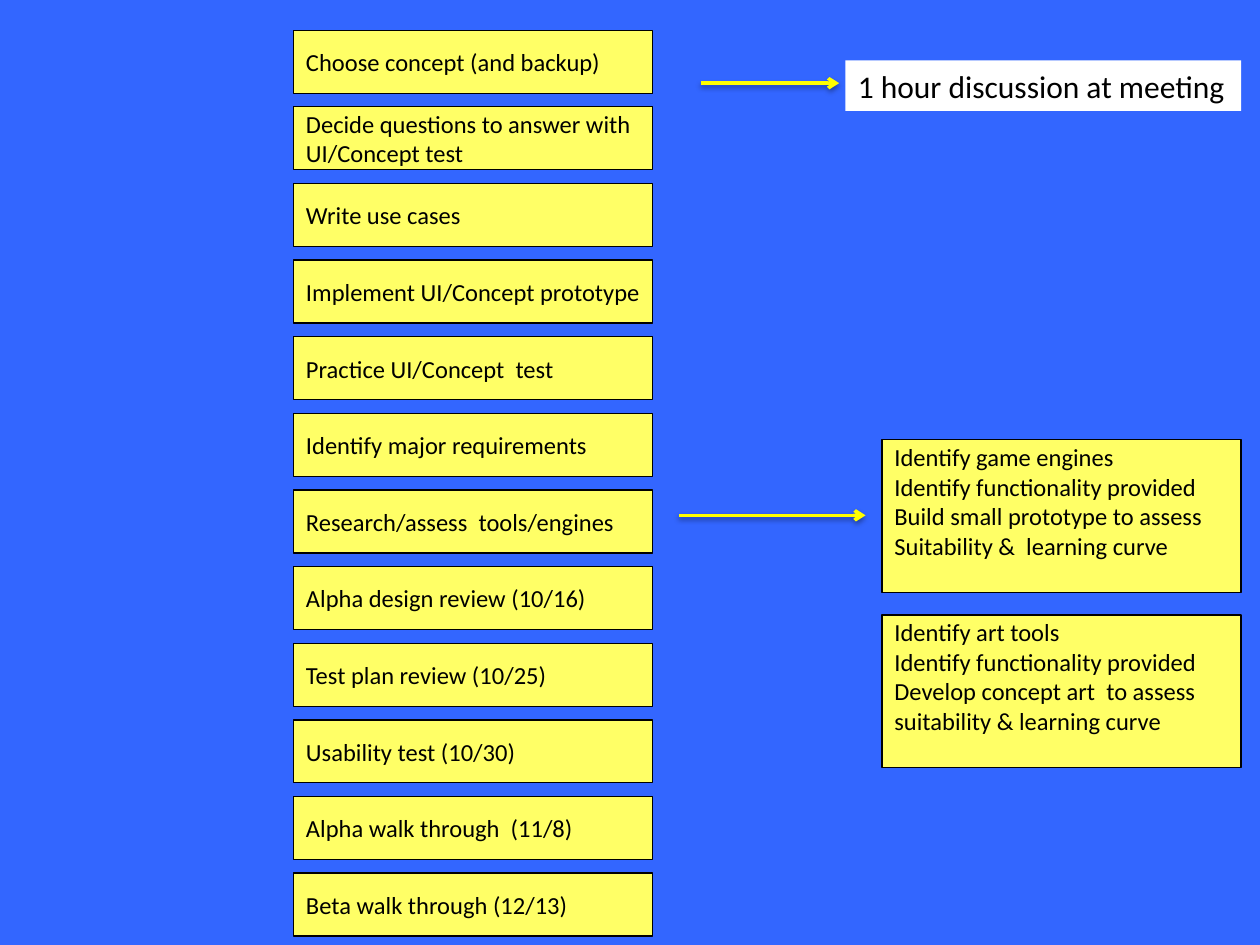
from lxml.etree import SubElement
from pptx import Presentation
from pptx.dml.color import RGBColor
from pptx.enum.shapes import MSO_CONNECTOR as Connector, MSO_SHAPE as Shape
from pptx.enum.text import MSO_ANCHOR as Anchor, PP_ALIGN as Align
from pptx.oxml.ns import qn
from pptx.util import Inches, Pt

BLUE = RGBColor(0x33, 0x66, 0xFF)
PALE_YELLOW = RGBColor(0xFF, 0xFF, 0x66)
YELLOW = RGBColor(0xFF, 0xFF, 0x00)
WHITE = RGBColor(0xFF, 0xFF, 0xFF)
BLACK = RGBColor(0x00, 0x00, 0x00)
FONT = "Calibri"

# Grid in inches: one column of steps, one column of notes
STEP_LEFT, STEP_HEIGHT = 2.33, 0.5
FIRST_TOP, LAST_TOP = 0.24, 6.93
NOTE_LEFT, NOTE_HEIGHT = 7, 1.21
BOX_WIDTH = 2.85
NOTE_RIGHT = NOTE_LEFT + BOX_WIDTH

STEPS = [
    "Choose concept (and backup)",
    "Decide questions to answer with\nUI/Concept test",
    "Write use cases",
    "Implement UI/Concept prototype",
    "Practice UI/Concept  test",
    "Identify major requirements",
    "Research/assess  tools/engines",
    "Alpha design review (10/16)",
    "Test plan review (10/25)",
    "Usability test (10/30)",
    "Alpha walk through  (11/8)",
    "Beta walk through (12/13)",
]
NOTES = [
    (3.49, "Identify game engines\nIdentify functionality provided\n"
           "Build small prototype to assess\nSuitability &  learning curve"),
    (4.88, "Identify art tools\nIdentify functionality provided\n"
           "Develop concept art  to assess\nsuitability & learning curve"),
]
ARROWS = [(5.56, 6.66, 0.66), (5.39, 6.87, 4.09)]  # start, end, height


def add_box(shapes, left, top, width, height, text, size=14, fill=PALE_YELLOW,
            outlined=True, anchor=Anchor.MIDDLE):
    box = shapes.add_shape(Shape.RECTANGLE, Inches(left), Inches(top),
                           Inches(width), Inches(height))
    box.shadow.inherit = False
    box.fill.solid()
    box.fill.fore_color.rgb = fill
    if outlined:
        box.line.color.rgb = BLACK
        box.line.width = Pt(0.75)
    else:
        box.line.fill.background()

    frame = box.text_frame
    frame.text = text
    frame.word_wrap = False
    frame.vertical_anchor = anchor
    for paragraph in frame.paragraphs:
        paragraph.alignment = Align.LEFT
        for run in paragraph.runs:
            run.font.name = FONT
            run.font.size = Pt(size)
            run.font.color.rgb = BLACK
    return box


def add_arrow(shapes, start, end, height):
    arrow = shapes.add_connector(Connector.STRAIGHT, Inches(start), Inches(height),
                                 Inches(end), Inches(height))
    arrow.line.color.rgb = YELLOW
    arrow.line.width = Pt(2)
    SubElement(arrow.line._get_or_add_ln(), qn("a:tailEnd"), type="arrow")

    # Soft shadow straight below the line
    effects = SubElement(arrow._element.spPr, qn("a:effectLst"))
    shadow = SubElement(effects, qn("a:outerShdw"), blurRad=str(Pt(3.1)),
                        dist=str(Pt(1.6)), dir="5400000", rotWithShape="0")
    color = SubElement(shadow, qn("a:srgbClr"), val=str(BLACK))
    SubElement(color, qn("a:alpha"), val="38000")


def add_steps(shapes):
    group = shapes.add_group_shape()
    pitch = (LAST_TOP - FIRST_TOP) / (len(STEPS) - 1)
    for row, text in enumerate(STEPS):
        add_box(group.shapes, STEP_LEFT, FIRST_TOP + row * pitch,
                BOX_WIDTH, STEP_HEIGHT, text)


def add_notes(shapes):
    for top, text in NOTES:
        note = add_box(shapes, NOTE_LEFT, top, BOX_WIDTH, NOTE_HEIGHT, text,
                       anchor=Anchor.TOP)
        note.text_frame.margin_top = Inches(0.02)


def main():
    presentation = Presentation()
    presentation.slide_width, presentation.slide_height = Inches(10), Inches(7.5)
    slide = presentation.slides.add_slide(presentation.slide_layouts[6])
    slide.background.fill.solid()
    slide.background.fill.fore_color.rgb = BLUE

    # Schedule on the left, details on the right
    add_steps(slide.shapes)
    add_notes(slide.shapes)

    # Remark on the first step
    remark_width = 3.14
    add_box(slide.shapes, NOTE_RIGHT - remark_width, 0.48, remark_width, 0.4,
            "1 hour discussion at meeting", size=18, fill=WHITE, outlined=False)

    for start, end, height in ARROWS:
        add_arrow(slide.shapes, start, end, height)
    presentation.save("out.pptx")


if __name__ == "__main__":
    main()
